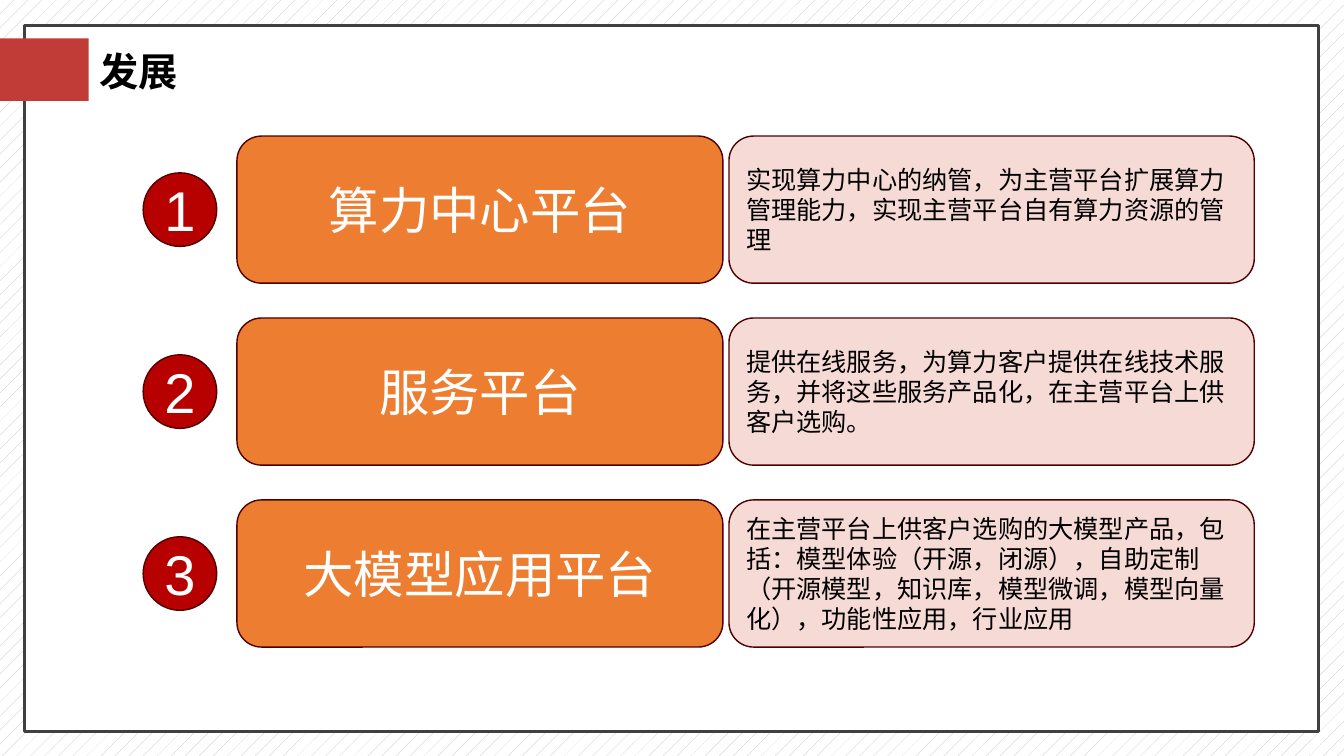
from pptx import Presentation
from pptx.dml.color import RGBColor
from pptx.enum import dml, shapes, text
from pptx.oxml import parse_xml
from pptx.oxml.ns import nsdecls
from pptx.util import Inches, Pt

# Content
HEADING = "发展"
PLATFORMS = [
    ("算力中心平台",
     "实现算力中心的纳管，为主营平台扩展算力管理能力，实现主营平台自有算力资源的管理"),
    ("服务平台",
     "提供在线服务，为算力客户提供在线技术服务，并将这些服务产品化，在主营平台上供客户选购。"),
    ("大模型应用平台",
     "在主营平台上供客户选购的大模型产品，包括：模型体验（开源，闭源），自助定制"
     "（开源模型，知识库，模型微调，模型向量化），功能性应用，行业应用"),
]
COLORS = {
    "white": "FFFFFF", "black": "000000", "hatch": "BFBFBF", "frame": "404040",
    "tab": "C13C37", "number": "B70000", "outline": "500000",
    "platform": "ED7D31", "detail": "F6DAD6",
}
CJK_FONT = "Noto Sans CJK SC"

# Layout rules, in inches
FIRST_TOP, ROW_STEP, CARD_HEIGHT = 1.35, 1.805, 1.46
NUMBER_LEFT, NUMBER_SIZE = 1.42, 0.73
PLATFORM_LEFT, PLATFORM_WIDTH = 2.35, 4.82
DETAIL_LEFT, DETAIL_WIDTH = 7.23, 5.21


def color(name):
    return RGBColor.from_string(COLORS[name])


def write(frame, words, size, ink="black", font="Arial", bold=False,
          align=text.PP_ALIGN.LEFT, anchor=text.MSO_ANCHOR.MIDDLE):
    frame.word_wrap = True
    frame.vertical_anchor = anchor
    paragraph = frame.paragraphs[0]
    paragraph.alignment = align
    run = paragraph.add_run()
    run.text = words
    run.font.size, run.font.bold, run.font.name = Pt(size), bold, font
    run.font.color.rgb = color(ink)
    run.font._element.append(
        parse_xml(f'<a:ea {nsdecls("a")} typeface="{CJK_FONT}"/>'))


def add_block(kind, box, fill, outline=None, weight=1):
    block = slide.shapes.add_shape(kind, *map(Inches, box))
    block.shadow.inherit = False
    block.fill.solid()
    block.fill.fore_color.rgb = color(fill)
    if outline:
        block.line.color.rgb = color(outline)
        block.line.width = Pt(weight)
    else:
        block.line.fill.background()
    return block


deck = Presentation()
deck.slide_width, deck.slide_height = Inches(13.33), Inches(7.5)
slide = deck.slides.add_slide(deck.slide_layouts[5])
KIND = shapes.MSO_SHAPE
CENTER = text.PP_ALIGN.CENTER

# Patterned background, framed page and red tab
backdrop = slide.background.fill
backdrop.patterned()
backdrop.pattern = dml.MSO_PATTERN.PERCENT_5
backdrop.fore_color.rgb = color("hatch")
backdrop.back_color.rgb = color("white")
add_block(KIND.RECTANGLE, (0.24, 0.25, 12.84, 7.01), "white", "frame", 2)
add_block(KIND.RECTANGLE, (-0.03, 0.38, 0.91, 0.62), "tab")

# Title, brought in front of the page
heading = slide.shapes.title
heading.left, heading.top, heading.width, heading.height = map(
    Inches, (0.89, 0.42, 5.77, 0.57))
write(heading.text_frame, HEADING, 28, font=CJK_FONT, bold=True,
      anchor=text.MSO_ANCHOR.TOP)
heading.text_frame.auto_size = text.MSO_AUTO_SIZE.SHAPE_TO_FIT_TEXT
slide.shapes._spTree.append(heading._element)

# One row per platform: number, name, description
for row, (platform, detail) in enumerate(PLATFORMS):
    top = FIRST_TOP + row * ROW_STEP
    number_top = top + (CARD_HEIGHT - NUMBER_SIZE) / 2
    number = add_block(
        KIND.OVAL, (NUMBER_LEFT, number_top, NUMBER_SIZE, NUMBER_SIZE),
        "number", "outline")
    write(number.text_frame, str(row + 1), 40, "white", align=CENTER)
    platform_card = add_block(
        KIND.ROUNDED_RECTANGLE,
        (PLATFORM_LEFT, top, PLATFORM_WIDTH, CARD_HEIGHT), "platform", "outline")
    write(platform_card.text_frame, platform, 36, "white", align=CENTER)
    detail_card = add_block(
        KIND.ROUNDED_RECTANGLE,
        (DETAIL_LEFT, top, DETAIL_WIDTH, CARD_HEIGHT), "detail", "outline")
    write(detail_card.text_frame, detail, 18)

deck.save("out.pptx")
